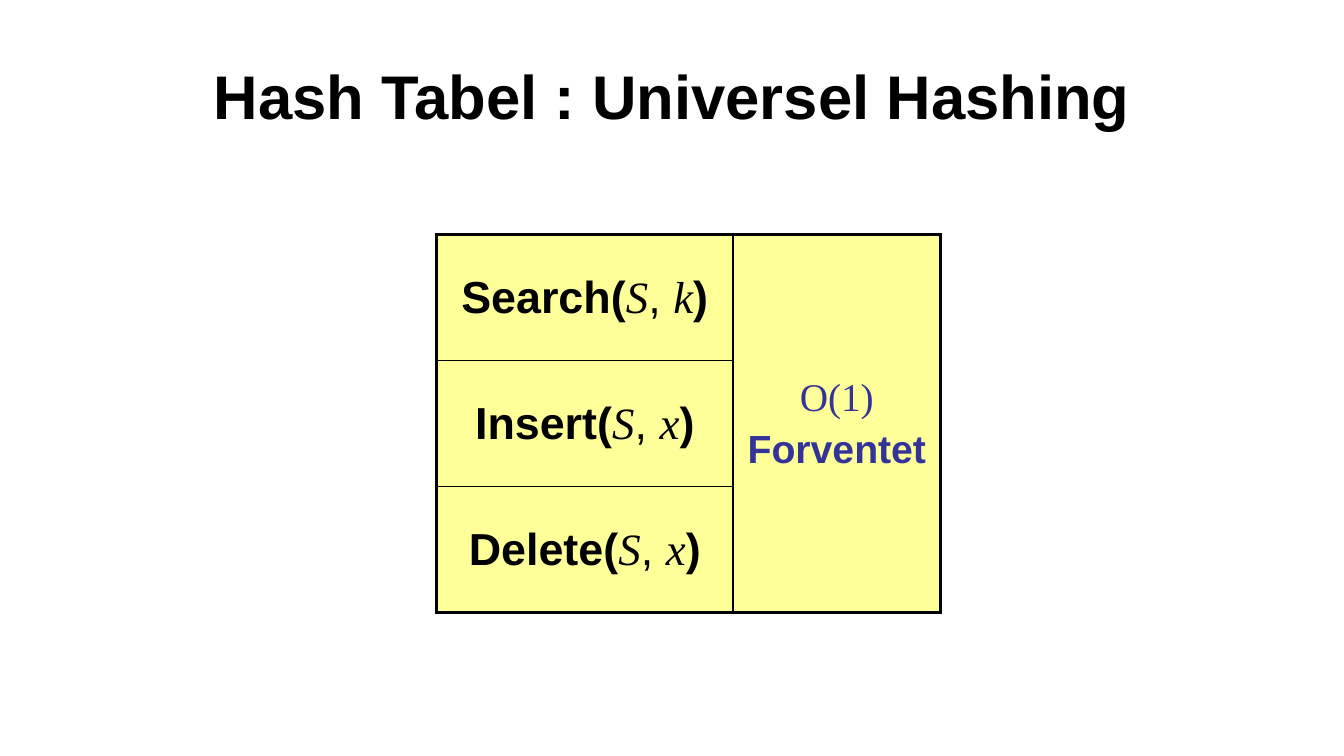
from lxml.etree import SubElement
from pptx import Presentation
from pptx.dml.color import RGBColor
from pptx.enum.text import MSO_ANCHOR, PP_ALIGN
from pptx.oxml.ns import qn
from pptx.util import Inches, Pt

COLORS = {"ink": "000000", "cell": "FFFF99", "cost": "333399"}
HEADING, MATH = "Arial", "Times New Roman"
THICK, THIN = 2.25, 1


class HashSlide:
    """Holds the presentation style and the slide being built."""

    def __init__(self):
        """Start a widescreen deck with one title-only slide."""
        self.deck = Presentation()
        self.deck.slide_width, self.deck.slide_height = Inches(13.33), Inches(7.5)
        self.slide = self.deck.slides.add_slide(self.deck.slide_layouts[5])

    def style(self, font, size, face=HEADING, color="ink", bold=False, italic=False):
        """Apply a complete look to a paragraph or run font."""
        font.size, font.name = Pt(size), face
        font.bold, font.italic = bold, italic
        font.color.rgb = RGBColor.from_string(COLORS[color])

    def title(self, wording):
        """Fill and place the title placeholder."""
        heading = self.slide.shapes.title
        heading.left, heading.top = Inches(1.67), Inches(0.3)
        heading.width, heading.height = Inches(10), Inches(1.28)
        heading.text_frame.text = wording
        heading.text_frame.vertical_anchor = MSO_ANCHOR.MIDDLE
        line = heading.text_frame.paragraphs[0]
        line.alignment = PP_ALIGN.CENTER
        self.style(line.font, 44, bold=True)

    def table(self, left, top, widths, row_height, row_count):
        """Add a table with the given column widths and equal rows."""
        grid = self.slide.shapes.add_table(
            row_count, len(widths), Inches(left), Inches(top),
            Inches(sum(widths)), Inches(row_height * row_count)).table
        for column, width in zip(grid.columns, widths):
            column.width = Inches(width)
        for row in grid.rows:
            row.height = Inches(row_height)
        return grid

    def cell(self, cell, top=THICK, bottom=THICK):
        """Fill a cell, set its insets and draw its borders."""
        cell.fill.solid()
        cell.fill.fore_color.rgb = RGBColor.from_string(COLORS["cell"])
        cell.vertical_anchor = MSO_ANCHOR.MIDDLE
        cell.margin_left = cell.margin_right = Inches(0.1)
        cell.margin_top = cell.margin_bottom = 0
        properties = cell._tc.get_or_add_tcPr()
        edges = {"a:lnL": THICK, "a:lnR": THICK, "a:lnT": top, "a:lnB": bottom}
        for position, (edge, width) in enumerate(edges.items()):
            border = SubElement(properties, qn(edge), w=str(Pt(width)))
            solid = SubElement(border, qn("a:solidFill"))
            SubElement(solid, qn("a:srgbClr"), val=COLORS["ink"])
            properties.insert(position, border)

    def line(self, paragraph, size):
        """Centre a paragraph with a fifth of its size as space above."""
        paragraph.alignment = PP_ALIGN.CENTER
        paragraph.space_before = Pt(size * 0.2)

    def operation(self, cell, name, argument):
        """Write a call such as Search(S, k) with math-style arguments."""
        signature = cell.text_frame.paragraphs[0]
        self.line(signature, 32)
        parts = [(name + "(", {"bold": True}),
                 ("S", {"face": MATH, "italic": True}),
                 (", ", {}),
                 (argument, {"face": MATH, "italic": True}),
                 (")", {"bold": True})]
        for wording, look in parts:
            part = signature.add_run()
            part.text = wording
            self.style(part.font, 32, **look)

    def cost(self, cell, bound, qualifier):
        """Write the running time and its qualifier."""
        cell.text_frame.text = f"{bound}\n{qualifier}"
        bound_line, qualifier_line = cell.text_frame.paragraphs
        self.style(bound_line.font, 28, MATH, "cost")
        self.style(qualifier_line.font, 28, color="cost", bold=True)
        for paragraph in (bound_line, qualifier_line):
            self.line(paragraph, 28)


def main():
    """Build and save the hashing slide."""
    page = HashSlide()
    page.title("Hash Tabel : Universel Hashing")
    operations = [("Search", "k"), ("Insert", "x"), ("Delete", "x")]
    last = len(operations) - 1
    costs = page.table(4.33, 2.33, [2.94, 2.06], 1.25, len(operations))
    costs.cell(0, 1).merge(costs.cell(last, 1))
    for index, (name, argument) in enumerate(operations):
        page.cell(costs.cell(index, 0),
                  top=THICK if index == 0 else THIN,
                  bottom=THICK if index == last else THIN)
        page.operation(costs.cell(index, 0), name, argument)
        page.cell(costs.cell(index, 1))
    page.cost(costs.cell(0, 1), "O(1)", "Forventet")
    page.deck.save("out.pptx")


if __name__ == "__main__":
    main()
